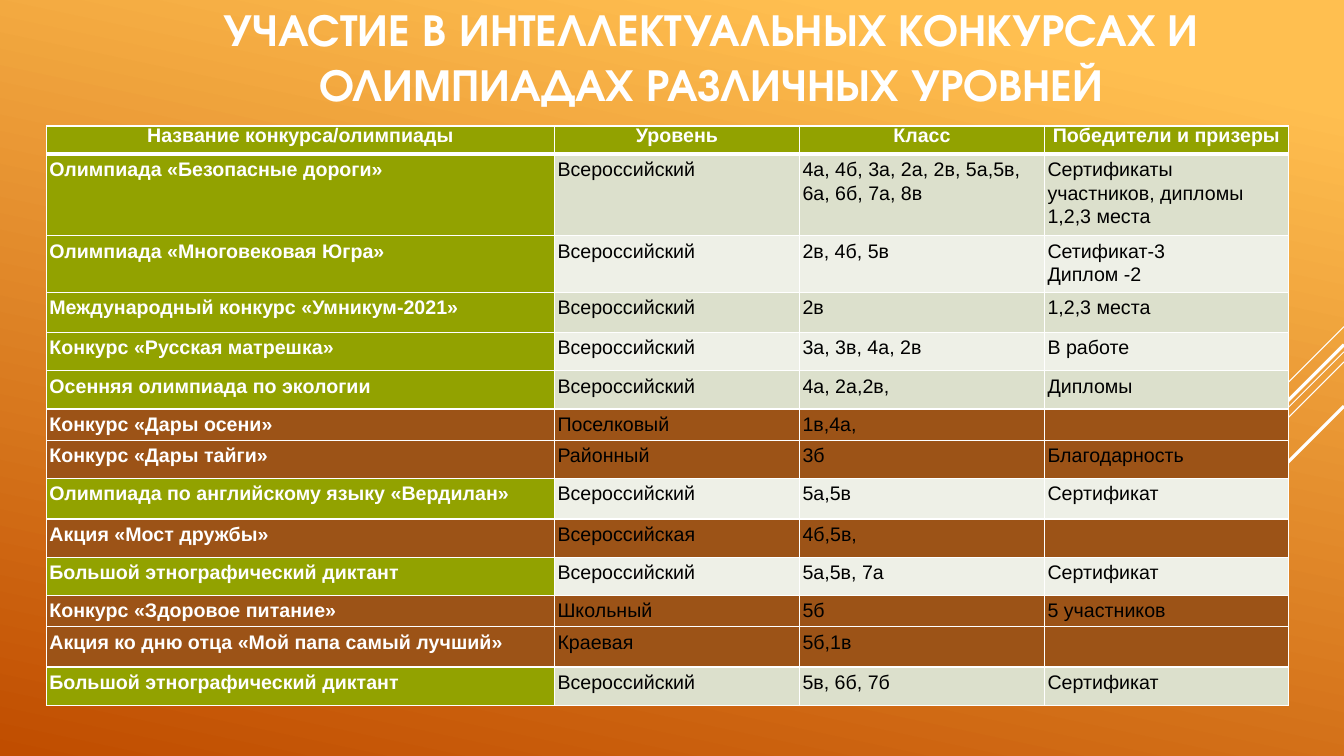
"""Builds the slide on pupils' contests and olympiads."""
from lxml import etree
from pptx import Presentation, util as u
from pptx.dml.color import RGBColor
from pptx.enum import shapes, text
from pptx.oxml.ns import qn

WHITE = RGBColor(0xFF, 0xFF, 0xFF)
BLACK = RGBColor(0, 0, 0)
GREEN = RGBColor(0x92, 0xA2, 0x00)
BROWN = RGBColor(0x9C, 0x53, 0x17)
BANDS = RGBColor(0xEE, 0xF0, 0xE7), RGBColor(0xDC, 0xE0, 0xCC)
SKY = RGBColor(0xFF, 0xBF, 0x50)
RUST = RGBColor(0xC0, 0x4D, 0x00)

WIDTH, HEIGHT = 13.33, 7.5
TITLE = "УЧАСТИЕ В ИНТЕЛЛЕКТУАЛЬНЫХ КОНКУРСАХ И ОЛИМПИАДАХ РАЗЛИЧНЫХ УРОВНЕЙ"
TITLE_BOX = 1.34, 0, 11.43, 1.11
TABLE_LEFT, TABLE_TOP = 0.46, 1.25
COLUMNS = 5.04, 2.43, 2.43, 2.42
HEADINGS = "Название конкурса/олимпиады", "Уровень", "Класс", "Победители и призеры"
HEADING_HEIGHT = 0.28
NATIONAL = "Всероссийский"
CONTESTS = [
    (0.75, "Олимпиада «Безопасные дороги»", NATIONAL,
     "4а, 4б, 3а, 2а, 2в, 5а,5в, 6а, 6б, 7а, 8в",
     "Сертификаты участников, дипломы 1,2,3 места"),
    (0.53, "Олимпиада «Многовековая Югра»", NATIONAL, "2в, 4б, 5в",
     "Сетификат-3\nДиплом -2"),
    (0.4, "Международный конкурс «Умникум-2021»", NATIONAL, "2в", "1,2,3 места"),
    (0.38, "Конкурс «Русская матрешка»", NATIONAL, "3а, 3в, 4а, 2в", "В работе"),
    (0.38, "Осенняя олимпиада по экологии", NATIONAL, "4а, 2а,2в,", "Дипломы"),
    (0.3, "Конкурс «Дары осени»", "Поселковый", "1в,4а,", ""),
    (0.38, "Конкурс «Дары тайги»", "Районный", "3б", "Благодарность"),
    (0.4, "Олимпиада по английскому языку «Вердилан»", NATIONAL, "5а,5в", "Сертификат"),
    (0.38, "Акция «Мост дружбы»", "Всероссийская", "4б,5в,", ""),
    (0.38, "Большой этнографический диктант", NATIONAL, "5а,5в, 7а", "Сертификат"),
    (0.3, "Конкурс «Здоровое питание»", "Школьный", "5б", "5 участников"),
    (0.4, "Акция ко дню отца «Мой папа самый лучший»", "Краевая", "5б,1в", ""),
    (0.38, "Большой этнографический диктант", NATIONAL, "5в, 6б, 7б", "Сертификат"),
]
# start height on the right edge, horizontal reach, line width
RAYS = [(3.24, 1, 0.75), (3.49, 3.26, 0.75), (3.59, 2.08, 0.75),
        (3.42, 1.91, 2.25), (4.03, 1.39, 2.25)]


def paint_background(slide):
    fill = slide.background.fill
    fill.gradient()
    fill.gradient_angle = 258
    for stop, position, color in zip(fill.gradient_stops, (0.1, 1), (SKY, RUST)):
        stop.position = position
        stop.color.rgb = color


def add_ray(slide, top, reach, width):
    ray = slide.shapes.add_connector(
        shapes.MSO_CONNECTOR.STRAIGHT, u.Inches(WIDTH), u.Inches(top),
        u.Inches(WIDTH - reach), u.Inches(top + reach))
    ray.line.color.rgb = WHITE
    ray.line.width = u.Pt(width)
    etree.SubElement(ray._element.spPr, qn("a:effectLst"))


def add_run(paragraph, words, size, font, color, bold):
    run = paragraph.add_run()
    run.text = words
    run.font.size = u.Pt(size)
    run.font.name = font
    run.font.color.rgb = color
    run.font.bold = bold


def add_title(slide):
    frame = slide.shapes.add_textbox(*map(u.Inches, TITLE_BOX)).text_frame
    frame.word_wrap = True
    frame.margin_top = frame.margin_bottom = 0
    frame.vertical_anchor = text.MSO_ANCHOR.MIDDLE
    paragraph = frame.paragraphs[0]
    paragraph.alignment = text.PP_ALIGN.CENTER
    add_run(paragraph, TITLE, 32.4, "TeX Gyre Adventor", WHITE, True)


def add_borders(cell, widths):
    properties = cell._tc.get_or_add_tcPr()
    for index, (side, width) in enumerate(widths.items()):
        line = etree.Element(qn("a:" + side), w=str(u.Pt(width)))
        solid = etree.SubElement(line, qn("a:solidFill"))
        etree.SubElement(solid, qn("a:srgbClr"), val=str(WHITE))
        properties.insert(index, line)


def fill_cell(cell, words, fill, color, bold, heading, below_heading):
    cell.margin_left = cell.margin_right = u.Inches(0.03)
    cell.margin_top = cell.margin_bottom = u.Inches(0.03)
    cell.fill.solid()
    cell.fill.fore_color.rgb = fill
    add_borders(cell, {"lnL": 1, "lnR": 1, "lnT": 3 if below_heading else 1,
                       "lnB": 3 if heading else 1})
    frame = cell.text_frame
    for index, line in enumerate(words.split("\n")):
        paragraph = frame.add_paragraph() if index else frame.paragraphs[0]
        paragraph.line_spacing = u.Pt(12.8) if heading else 1.07
        if heading:
            paragraph.alignment = text.PP_ALIGN.CENTER
        if line:
            add_run(paragraph, line, 14, "Arial", color, bold)
        else:
            etree.SubElement(paragraph._p, qn("a:endParaRPr"), sz="1400")


def add_contest_table(slide):
    rows = [(HEADING_HEIGHT, *HEADINGS), *CONTESTS]
    table = slide.shapes.add_table(
        len(rows), len(COLUMNS), u.Inches(TABLE_LEFT), u.Inches(TABLE_TOP),
        u.Inches(sum(COLUMNS)), u.Inches(sum(row[0] for row in rows))).table
    for column, width in zip(table.columns, COLUMNS):
        column.width = u.Inches(width)
    for r, (height, *entries) in enumerate(rows):
        table.rows[r].height = u.Inches(height)
        heading = r == 0
        local = not heading and entries[1] != NATIONAL
        for c, words in enumerate(entries):
            strong = heading or c == 0
            fill = BROWN if local else GREEN if strong else BANDS[r % 2]
            fill_cell(table.cell(r, c), words, fill, WHITE if strong else BLACK,
                      strong, heading, r == 1)


def main():
    presentation = Presentation()
    presentation.slide_width = u.Inches(WIDTH)
    presentation.slide_height = u.Inches(HEIGHT)
    slide = presentation.slides.add_slide(presentation.slide_layouts[6])
    paint_background(slide)
    for ray in RAYS:
        add_ray(slide, *ray)
    add_title(slide)
    add_contest_table(slide)
    presentation.save("out.pptx")


if __name__ == "__main__":
    main()
